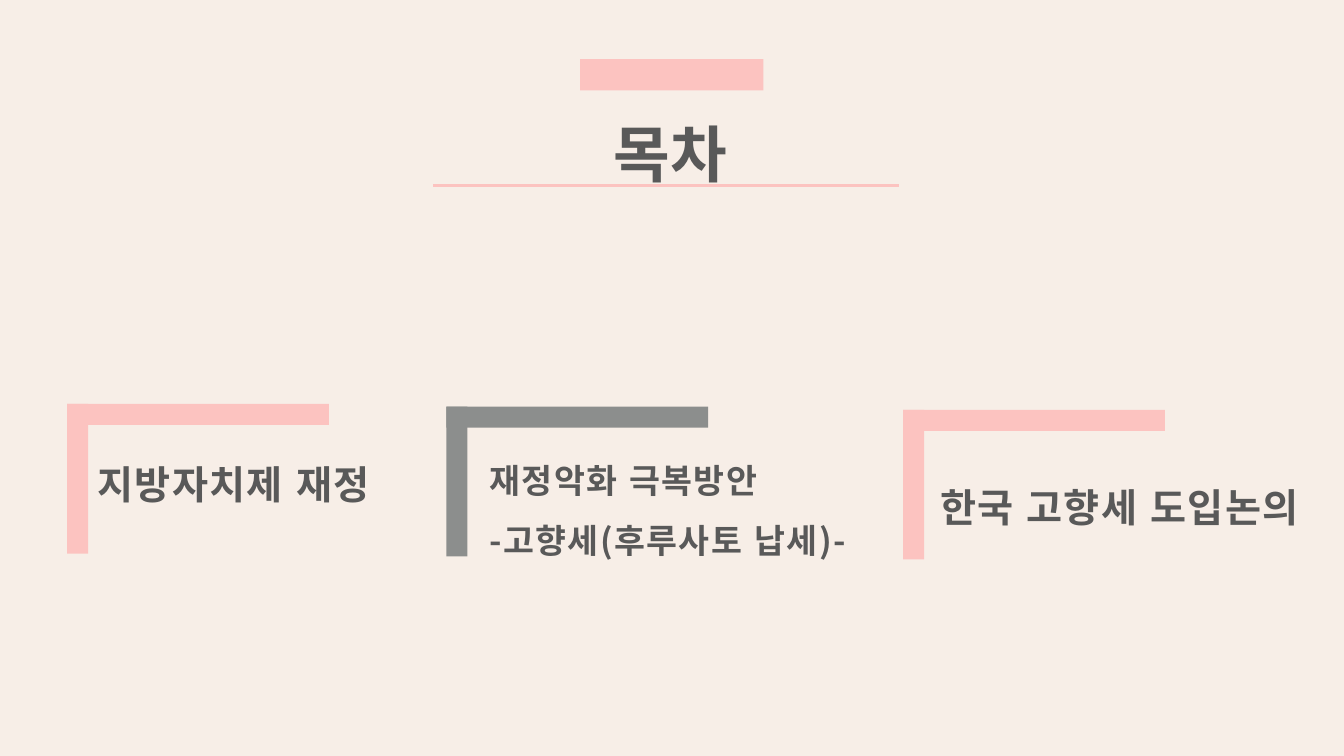
from dataclasses import dataclass

from lxml import etree
from pptx import Presentation
from pptx.dml.color import RGBColor
from pptx.enum.lang import MSO_LANGUAGE_ID
from pptx.enum.shapes import MSO_CONNECTOR, MSO_SHAPE
from pptx.enum.text import MSO_ANCHOR, MSO_AUTO_SIZE, PP_ALIGN
from pptx.oxml.ns import qn
from pptx.util import Cm, Pt

RECT = MSO_SHAPE.RECTANGLE
LINE = MSO_CONNECTOR.STRAIGHT
TOP = MSO_ANCHOR.TOP
GROW = MSO_AUTO_SIZE.SHAPE_TO_FIT_TEXT
LEFT, CENTER = PP_ALIGN.LEFT, PP_ALIGN.CENTER
KOREAN = MSO_LANGUAGE_ID.KOREAN

FONT = "Noto Sans CJK KR"
COLORS = {"back": "F7EEE7", "pink": "FCC3C0", "gray": "8C8E8D", "text": "595959"}
THICK, ARM, LEG = 0.53, 6.6, 3.77


@dataclass
class Topic:
    lines: list[str]
    corner: tuple[float, float]
    box: tuple[float, float, float, float]
    color: str = "pink"
    size: int = 28
    spacing: float = 1.5
    track: int = 90
    grouped: bool = True


TOPICS = [
    Topic(["지방자치제 재정"], (1.69, 10.18), (2.21, 11.48, 7.7, 1.45), spacing=1),
    Topic(["재정악화 극복방안", "-고향세(후루사토 납세)-"], (11.25, 10.25),
          (12.09, 10.95, 9.6, 3.28), color="gray", size=24, track=100, grouped=False),
    Topic(["한국 고향세 도입논의"], (22.76, 10.33), (23.44, 11.46, 9.87, 2.01)),
]


def rgb(name: str) -> RGBColor:
    return RGBColor.from_string(COLORS[name])


def add_bar(shapes, x: float, y: float, w: float, h: float, color: str) -> None:
    bar = shapes.add_shape(RECT, Cm(x), Cm(y), Cm(w), Cm(h))
    bar.shadow.inherit = False
    bar.fill.solid()
    bar.fill.fore_color.rgb = rgb(color)
    bar.line.fill.background()


def set_text(shape, lines: list[str], *, size: int, track: int = 90,
             spacing: float = 1, align=LEFT) -> None:
    """Fill a text shape; track is the letter spacing in 1/100 pt."""
    frame = shape.text_frame
    frame.text = "\n".join(lines)
    frame.word_wrap = True
    frame.auto_size = GROW
    frame.vertical_anchor = TOP
    for para in frame.paragraphs:
        para.alignment = align
        para.line_spacing = spacing
        for run in para.runs:
            font = run.font
            font.name, font.size, font.bold = FONT, Pt(size), True
            font.color.rgb = rgb("text")
            font.language_id = KOREAN
            props = run._r.get_or_add_rPr()
            props.set("spc", str(track))
            east = etree.Element(qn("a:ea"), typeface=FONT)
            props.find(qn("a:latin")).addnext(east)


def add_title(slide) -> None:
    add_bar(slide.shapes, 14.62, 1.49, 4.62, 0.79, "pink")
    title = slide.shapes.title
    title.left, title.top, title.width, title.height = map(Cm, (14.94, 2.79, 3.91, 2.08))
    set_text(title, ["목차"], size=44, align=CENTER)
    rule = slide.shapes.add_connector(LINE, Cm(10.92), Cm(4.67), Cm(22.66), Cm(4.67))
    rule.line.color.rgb = rgb("pink")
    rule.line.width = Pt(2.5)
    etree.SubElement(rule._element.spPr, qn("a:effectLst"))


def add_topic(slide, topic: Topic) -> None:
    shapes = slide.shapes
    holder = shapes.add_group_shape().shapes if topic.grouped else shapes
    x, y = topic.corner
    add_bar(holder, x, y, THICK, LEG, topic.color)
    add_bar(holder, x, y, ARM, THICK, topic.color)
    label = shapes.add_textbox(*map(Cm, topic.box))
    set_text(label, topic.lines, size=topic.size, track=topic.track,
             spacing=topic.spacing)


def main() -> None:
    deck = Presentation()
    deck.slide_width, deck.slide_height = Cm(33.87), Cm(19.05)
    slide = deck.slides.add_slide(deck.slide_layouts.get_by_name("Title Only"))
    slide.background.fill.solid()
    slide.background.fill.fore_color.rgb = rgb("back")
    add_title(slide)
    for topic in TOPICS:
        add_topic(slide, topic)
    deck.save("out.pptx")


if __name__ == "__main__":
    main()
